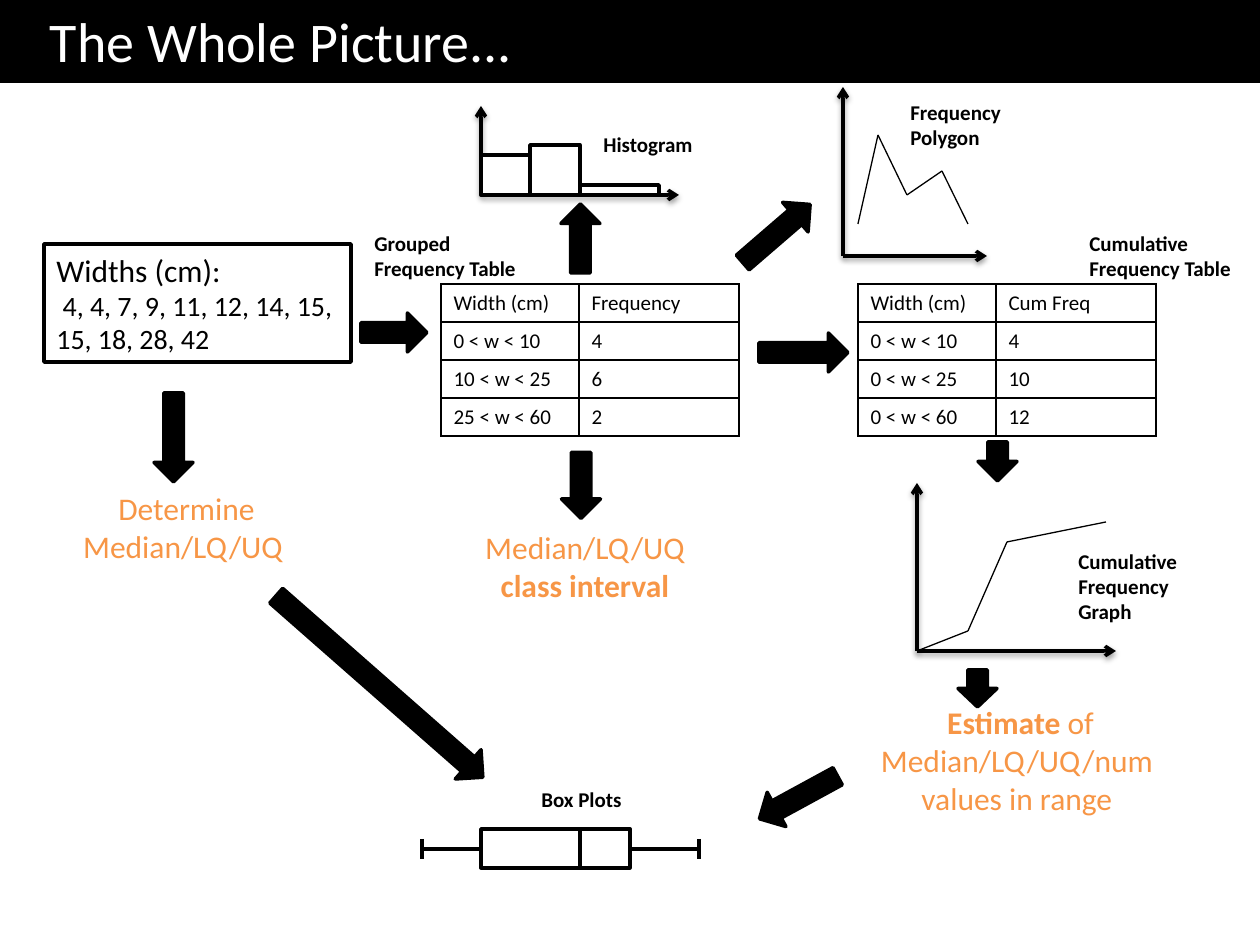
import itertools
import lxml.etree
import pptx
import pptx.dml.color
import pptx.enum.shapes
import pptx.enum.text
import pptx.oxml
import pptx.oxml.ns
import pptx.util

PX = 7257  # EMU in one px, 126 px to the inch
RGB = pptx.dml.color.RGBColor.from_string
THEME = dict(ink=RGB("000000"), paper=RGB("FFFFFF"), warm=RGB("F79646"), font="Calibri",
             title=32, head=18, body=16, label=12, thick=2, thin=0.75)
NS = pptx.oxml.ns.nsdecls("a")
KIND = pptx.enum.shapes.MSO_SHAPE
ALIGN = pptx.enum.text.PP_ALIGN
MIDDLE = pptx.enum.text.MSO_ANCHOR.MIDDLE
SHADOW = ('<a:outerShdw blurRad="40000" dist="20000" dir="5400000" rotWithShape="0">'
          '<a:srgbClr val="000000"><a:alpha val="38000"/></a:srgbClr></a:outerShdw>')

deck = pptx.Presentation()
deck.slide_width, deck.slide_height = 1260 * PX, 945 * PX
slide = deck.slides.add_slide(deck.slide_layouts[6])
shapes = slide.shapes


def write(frame, *lines, size="label", color="ink", bold=False, align=ALIGN.LEFT):
    """Fill a frame; a line is text or a list of (text, bold) runs."""
    frame.word_wrap = True
    for i, line in enumerate(lines):
        para = frame.add_paragraph() if i else frame.paragraphs[0]
        para.alignment = align
        for text, heavy in [(line, bold)] if isinstance(line, str) else line:
            run = para.add_run()
            run.text = text
            run.font.name = THEME["font"]
            run.font.size = pptx.util.Pt(THEME[size])
            run.font.bold = heavy
            run.font.color.rgb = THEME[color]


def draw(x1, y1, x2, y2, width="thick", arrow=False):
    """Draw a line, with an arrowhead and a soft shadow for an axis."""
    line = shapes.add_connector(pptx.enum.shapes.MSO_CONNECTOR.STRAIGHT,
                                x1 * PX, y1 * PX, x2 * PX, y2 * PX)
    line.line.color.rgb = THEME["ink"]
    line.line.width = pptx.util.Pt(THEME[width])
    if arrow:
        lxml.etree.SubElement(line.line._get_or_add_ln(),
                              pptx.oxml.ns.qn("a:tailEnd"), type="arrow")
    glow = SHADOW if arrow else ""
    line._element.spPr.append(pptx.oxml.parse_xml(f"<a:effectLst {NS}>{glow}</a:effectLst>"))


# Axes: origin, top and right end
for x, y, top, right in [(481, 195, 106, 679), (843, 256, 87, 987), (917, 651, 483, 1116)]:
    draw(x, y, x, top, arrow=True)
    draw(x, y, right, y, arrow=True)

# Curves: frequency polygon and cumulative graph
for curve in [
    [(858, 224), (878, 135), (907, 195), (942, 171), (968, 224)],
    [(917, 651), (968, 631), (1007, 542), (1106, 522)],
]:
    for start, end in itertools.pairwise(curve):
        draw(*start, *end, width="thin")

# Whiskers of the box plot
for edge, tip in [(481, 422), (630, 699)]:
    draw(edge, 849, tip, 849)
    draw(tip, 839, tip, 859)

# Block arrows: centre, length, turn
arrows = [
    (580, 239, 69, 270), (776, 234, 89, 319.2), (394, 333, 66, 0), (803, 353, 89, 0),
    (173, 438, 89, 90), (581, 486, 66, 90), (997, 462, 39, 90), (977, 689, 37, 90),
    (379, 687, 275, 41.3), (798, 798, 89, 151.4),
]
blocks = [(KIND.RIGHT_ARROW, x - size // 2, y - 20, size, 39, turn, "ink")
          for x, y, size, turn in arrows]

# Boxes: histogram bars, box plot, data box, title bar
blocks += [(KIND.RECTANGLE, *rect, 0, "paper") for rect in [
    (481, 155, 49, 40), (530, 145, 50, 50), (580, 185, 79, 10),
    (481, 829, 99, 39), (580, 829, 50, 39), (44, 244, 307, 118),
]]
blocks.append((KIND.RECTANGLE, 0, 0, 1260, 81, 0, "ink"))
made = []
for kind, x, y, w, h, turn, fill in blocks:
    block = shapes.add_shape(kind, x * PX, y * PX, w * PX, h * PX)
    block.rotation = turn
    block.shadow.inherit = False
    block.fill.solid()
    block.fill.fore_color.rgb = THEME[fill]
    block.line.color.rgb = THEME["ink"]
    block.line.width = pptx.util.Pt(THEME["thick"])
    made.append(block)

# Text of the data box and the title bar
data, title = (block.text_frame for block in made[-2:])
data.vertical_anchor = title.vertical_anchor = MIDDLE
title.margin_left = 50 * PX
write(title, "The Whole Picture...", size="title", color="paper")
write(data, "Widths (cm):", size="head")
data.add_paragraph()
write(data, "Widths (cm):", size="head") if not data.paragraphs[0].runs else None
para = data.paragraphs[1].add_run()
para.text = " 4, 4, 7, 9, 11, 12, 14, 15, 15, 18, 28, 42"
para.font.name, para.font.size = THEME["font"], pptx.util.Pt(THEME["body"])
para.font.color.rgb = THEME["ink"]
data.paragraphs[1].alignment = ALIGN.LEFT

# Labels and results
label = dict(bold=True)
result = dict(size="head", color="warm", align=ALIGN.CENTER)
for x, y, w, h, text, look in [
    (362, 224, 189, 63, "Grouped Frequency Table", label),
    (591, 125, 139, 38, "Histogram", label),
    (898, 93, 179, 63, "Frequency Polygon", label),
    (1077, 224, 179, 63, "Cumulative Frequency Table", label),
    (1066, 542, 139, 89, "Cumulative Frequency Graph", label),
    (512, 780, 139, 38, "Box Plots", dict(bold=True, align=ALIGN.CENTER)),
    (64, 483, 238, 89, " Determine Median/LQ/UQ", result),
    (471, 522, 228, 89, [("Median/LQ/UQ ", False), ("class interval", True)], result),
    (858, 697, 318, 127, [(" Estimate", True), (" of Median/LQ/UQ/num values in range", False)],
     result),
]:
    box = shapes.add_textbox(x * PX, y * PX, w * PX, h * PX)
    write(box.text_frame, text, **look)

# Tables
for left, rows in [
    (441, [("Width (cm)", "Frequency"), ("0 < w < 10", "4"),
           ("10 < w < 25", "6"), ("25 < w < 60", "2")]),
    (858, [("Width (cm)", "Cum Freq"), ("0 < w < 10", "4"),
           ("0 < w < 25", "10"), ("0 < w < 60", "12")]),
]:
    table = shapes.add_table(4, 2, left * PX, 284 * PX, 298 * PX, 152 * PX).table
    table.columns[0].width, table.columns[1].width = 138 * PX, 160 * PX
    for r, row in enumerate(rows):
        for c, text in enumerate(row):
            cell = table.cell(r, c)
            write(cell.text_frame, text)
            cell.fill.solid()
            cell.fill.fore_color.rgb = THEME["paper"]
            for i, side in enumerate("LRTB"):
                cell._tc.tcPr.insert(i, pptx.oxml.parse_xml(
                    f'<a:ln{side} {NS} w="12700"><a:solidFill>'
                    f'<a:srgbClr val="{THEME["ink"]}"/></a:solidFill></a:ln{side}>'))

deck.save("out.pptx")
